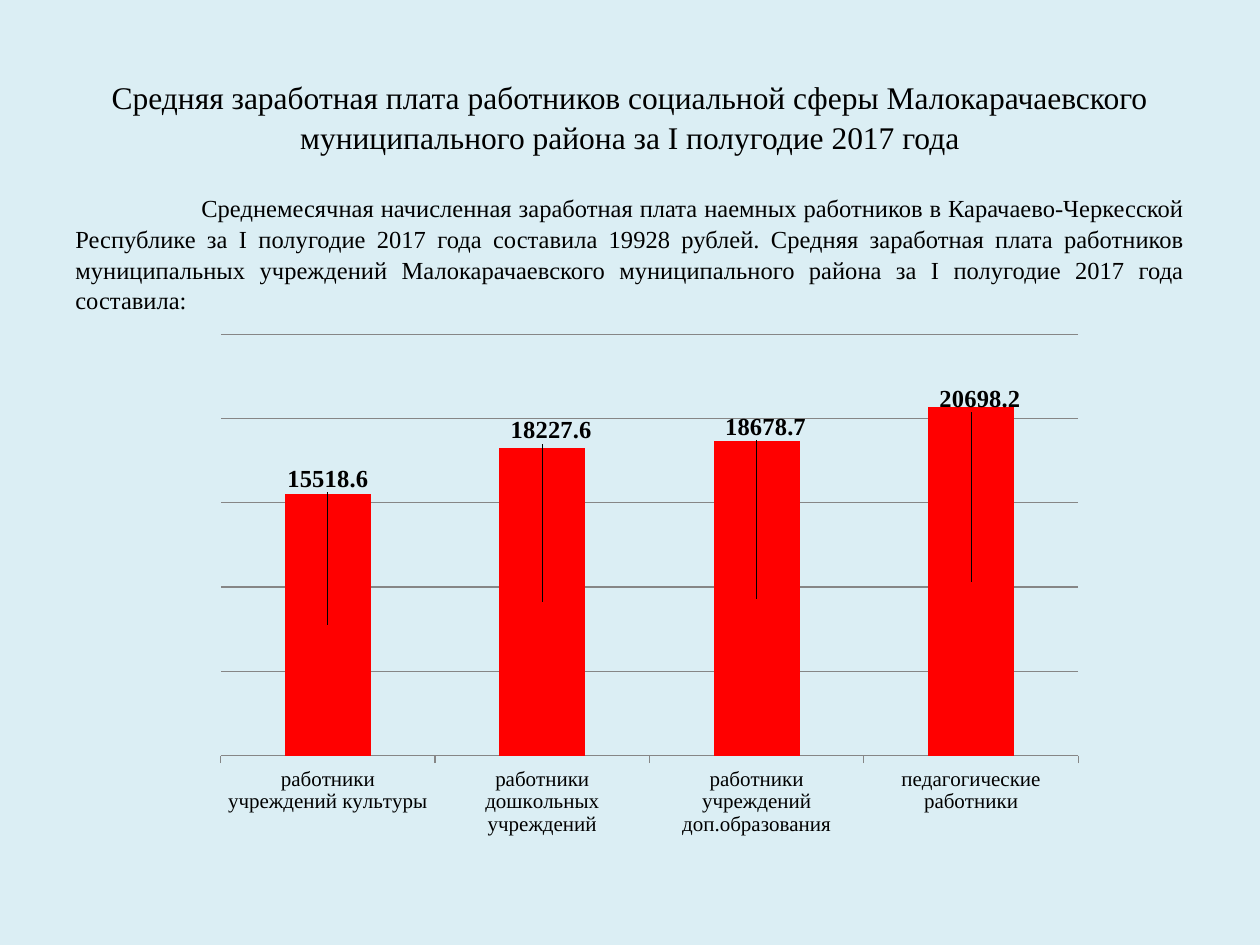
from pptx import Presentation
from pptx.chart.data import CategoryChartData
from pptx.dml.color import RGBColor
from pptx.enum.chart import XL_CHART_TYPE, XL_LABEL_POSITION, XL_TICK_LABEL_POSITION, XL_TICK_MARK
from pptx.enum.text import MSO_ANCHOR, PP_ALIGN
from pptx.util import Inches, Pt
from pptx.oxml import parse_xml
from pptx.oxml.ns import nsdecls


def paint(color, code):
    color.rgb = RGBColor.from_string(code)


def style(font, size, bold=False):
    font.name = "Times New Roman"
    font.size = Pt(size)
    font.bold = bold
    paint(font.color, "000000")


deck = Presentation()
deck.slide_width, deck.slide_height = Inches(10), Inches(7.5)
slide = deck.slides.add_slide(deck.slide_layouts[6])
slide.background.fill.solid()
paint(slide.background.fill.fore_color, "DBEEF4")

title = "Средняя заработная плата работников социальной сферы Малокарачаевского муниципального района за I полугодие 2017 года"
body = (
    "Среднемесячная начисленная заработная плата наемных работников в Карачаево-Черкесской Республике "
    "за I полугодие 2017 года составила 19928 рублей. Средняя заработная плата работников муниципальных "
    "учреждений Малокарачаевского муниципального района за I полугодие 2017 года составила:"
)
texts = [
    (title, 0.3, 1.24, 18, PP_ALIGN.CENTER, MSO_ANCHOR.MIDDLE, 0),
    (body, 1.47, 1.1, 14, PP_ALIGN.JUSTIFY, MSO_ANCHOR.TOP, 1),
]
for text, top, height, size, align, anchor, indent in texts:
    frame = slide.shapes.add_textbox(Inches(0.5), Inches(top), Inches(9), Inches(height)).text_frame
    frame.word_wrap = True
    frame.vertical_anchor = anchor
    para = frame.paragraphs[0]
    para.text = text
    para.alignment = align
    para.line_spacing = 1.05
    para._p.get_or_add_pPr().set("indent", str(Inches(indent)))
    style(para.font, size)

data = CategoryChartData()
data.categories = [
    "работники учреждений культуры",
    "работники дошкольных учреждений",
    "работники учреждений доп.образования",
    "педагогические работники",
]
data.add_series("Series 1", [15518.6, 18227.6, 18678.7, 20698.2])
chart = slide.shapes.add_chart(
    XL_CHART_TYPE.COLUMN_STACKED, Inches(1.61), Inches(2.57), Inches(7.09), Inches(4.13), data
).chart
chart.has_legend = False
chart.has_title = False
chart.font.name = "Calibri"
chart.font.size = Pt(18)
paint(chart.font.color, "000000")

plot = chart.plots[0]
plot.gap_width = 150
plot.overlap = 100
plot.vary_by_categories = False
bars = plot.series[0]
bars.format.fill.solid()
paint(bars.format.fill.fore_color, "FF0000")

names = chart.category_axis
names.major_tick_mark = XL_TICK_MARK.OUTSIDE
style(names.tick_labels.font, 12)
paint(names.format.line.color, "868686")

scale = chart.value_axis
scale.minimum_scale, scale.maximum_scale, scale.major_unit = 0, 25000, 5000
scale.visible = False
scale.tick_label_position = XL_TICK_LABEL_POSITION.NONE
scale.has_major_gridlines = True
paint(scale.major_gridlines.format.line.color, "868686")

labels = bars.data_labels
labels.show_value = True
style(labels.font, 14, True)
shifts = [(0, -0.28), (0.01, -0.33), (0.01, -0.33), (0.01, -0.35)]
for index, (x, y) in enumerate(shifts):
    label = bars.points[index].data_label
    style(label.font, 14, True)
    label.position = XL_LABEL_POSITION.CENTER
    node = bars._element.xpath(f"c:dLbls/c:dLbl[c:idx/@val='{index}']")[0]
    node.insert(1, parse_xml(
        f'<c:layout {nsdecls("c")}><c:manualLayout><c:x val="{x}"/><c:y val="{y}"/></c:manualLayout></c:layout>'
    ))

area = chart._chartSpace.chart.plotArea
for old in area.xpath("c:layout"):
    area.remove(old)
area.insert(0, parse_xml(
    f'<c:layout {nsdecls("c")}><c:manualLayout><c:layoutTarget val="inner"/>'
    '<c:xMode val="edge"/><c:yMode val="edge"/><c:x val="0.02"/><c:y val="0.02"/>'
    '<c:w val="0.96"/><c:h val="0.81"/></c:manualLayout></c:layout>'
))

deck.save("out.pptx")
